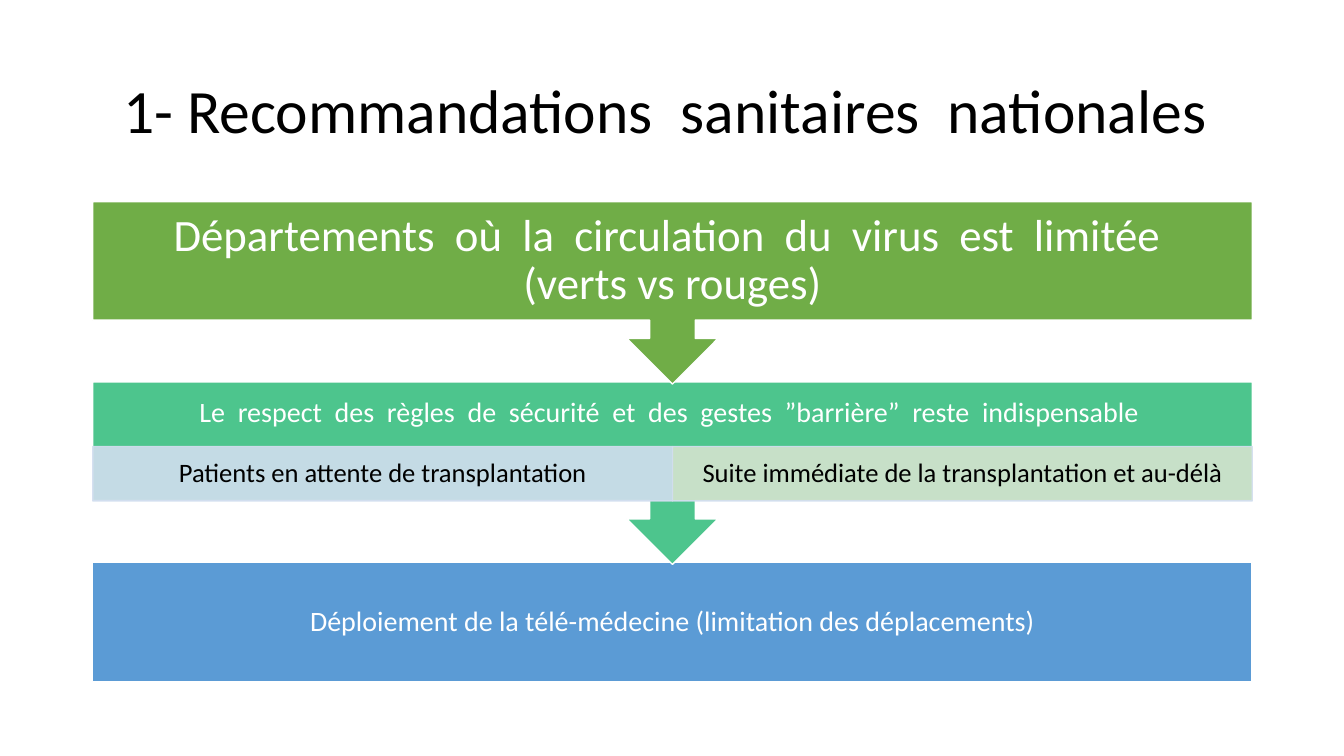
from dataclasses import dataclass

from lxml.etree import SubElement
from pptx import Presentation
from pptx.dml.color import RGBColor
from pptx.enum.shapes import MSO_SHAPE
from pptx.enum.text import MSO_ANCHOR, PP_ALIGN
from pptx.oxml.ns import qn
from pptx.shapes.autoshape import Shape
from pptx.slide import Slide
from pptx.util import Inches, Pt

WHITE = RGBColor(0xFF, 0xFF, 0xFF)
BLACK = RGBColor(0x00, 0x00, 0x00)
GREEN = RGBColor(0x70, 0xAD, 0x47)
TEAL = RGBColor(0x4D, 0xC5, 0x8D)
BLUE = RGBColor(0x5B, 0x9B, 0xD5)
PALE_BLUE = RGBColor(0xD2, 0xDE, 0xEF)
PALE_GREEN = RGBColor(0xD5, 0xE3, 0xCF)

LEFT, WIDTH = 0.92, 11.5
CALLOUT_HEIGHT, BOX_HEIGHT = 1.81, 1.18
HEADING_HEIGHT, CELL_HEIGHT = 0.63, 0.54
STEP_TOPS = (2.0, 3.79, 5.58)


@dataclass
class Block:
    text: str
    left: float
    top: float
    width: float
    height: float
    fill: RGBColor
    size: float
    side_inset: float
    end_inset: float
    extra_bottom: float = 0
    kind: MSO_SHAPE = MSO_SHAPE.RECTANGLE
    line: RGBColor = WHITE
    font_color: RGBColor = WHITE
    opacity: int = 100


def write_text(shape: Shape, text: str, size: float, color: RGBColor) -> None:
    frame = shape.text_frame
    frame.word_wrap = True
    frame.vertical_anchor = MSO_ANCHOR.MIDDLE
    paragraph = frame.paragraphs[0]
    paragraph.text = text
    paragraph.alignment = PP_ALIGN.CENTER
    paragraph.line_spacing = 0.9
    paragraph.font.name = "Calibri"
    paragraph.font.size = Pt(size)
    paragraph.font.color.rgb = color


def draw_block(slide: Slide, block: Block) -> None:
    shape = slide.shapes.add_shape(
        block.kind, Inches(block.left), Inches(block.top),
        Inches(block.width), Inches(block.height))
    shape.shadow.inherit = False
    shape.fill.solid()
    shape.fill.fore_color.rgb = block.fill
    shape.line.color.rgb = block.line
    shape.line.width = Pt(1)
    if block.opacity < 100:
        for color in shape.element.spPr.iter(qn("a:srgbClr")):
            SubElement(color, qn("a:alpha")).set("val", str(block.opacity * 1000))
    frame = shape.text_frame
    frame.margin_left = frame.margin_right = Inches(block.side_inset)
    frame.margin_top = Inches(block.end_inset)
    frame.margin_bottom = Inches(block.end_inset + block.extra_bottom)
    write_text(shape, block.text, block.size, block.font_color)


def patient_cell(column: int, text: str, fill: RGBColor) -> Block:
    width = WIDTH / 2
    return Block(text, LEFT + column * width, STEP_TOPS[1] + HEADING_HEIGHT + 0.01,
                 width, CELL_HEIGHT, fill, 19, 0.15, 0.03,
                 line=PALE_BLUE, font_color=BLACK, opacity=90)


# Blocks from back to front: lower steps sit behind the arrows above them
BLOCKS = (
    Block("Déploiement de la télé-médecine (limitation des déplacements)",
          LEFT, STEP_TOPS[2], WIDTH, BOX_HEIGHT, BLUE, 20, 0.16, 0.16),
    Block("Le  respect  des  règles  de  sécurité  et  des  gestes  ”barrière”  reste  indispensable ",
          LEFT, STEP_TOPS[1], WIDTH, CALLOUT_HEIGHT, TEAL, 20, 0.16, 0.16,
          extra_bottom=BOX_HEIGHT - HEADING_HEIGHT, kind=MSO_SHAPE.DOWN_ARROW_CALLOUT),
    patient_cell(0, "Patients en attente de transplantation", PALE_BLUE),
    patient_cell(1, "Suite immédiate de la transplantation et au-délà", PALE_GREEN),
    Block("Départements  où  la  circulation  du  virus  est  limitée  (verts vs rouges)",
          LEFT, STEP_TOPS[0], WIDTH, CALLOUT_HEIGHT, GREEN, 32, 0.25, 0.25,
          kind=MSO_SHAPE.DOWN_ARROW_CALLOUT),
)


def main() -> None:
    presentation = Presentation()
    presentation.slide_width = Inches(13.33)
    presentation.slide_height = Inches(7.5)
    slide = presentation.slides.add_slide(presentation.slide_layouts[6])

    # Title
    title = slide.shapes.add_textbox(Inches(LEFT), Inches(0.4), Inches(WIDTH), Inches(1.45))
    write_text(title, "1- Recommandations  sanitaires  nationales ", 44, BLACK)

    # Steps
    for block in BLOCKS:
        draw_block(slide, block)

    presentation.save("out.pptx")


if __name__ == "__main__":
    main()
